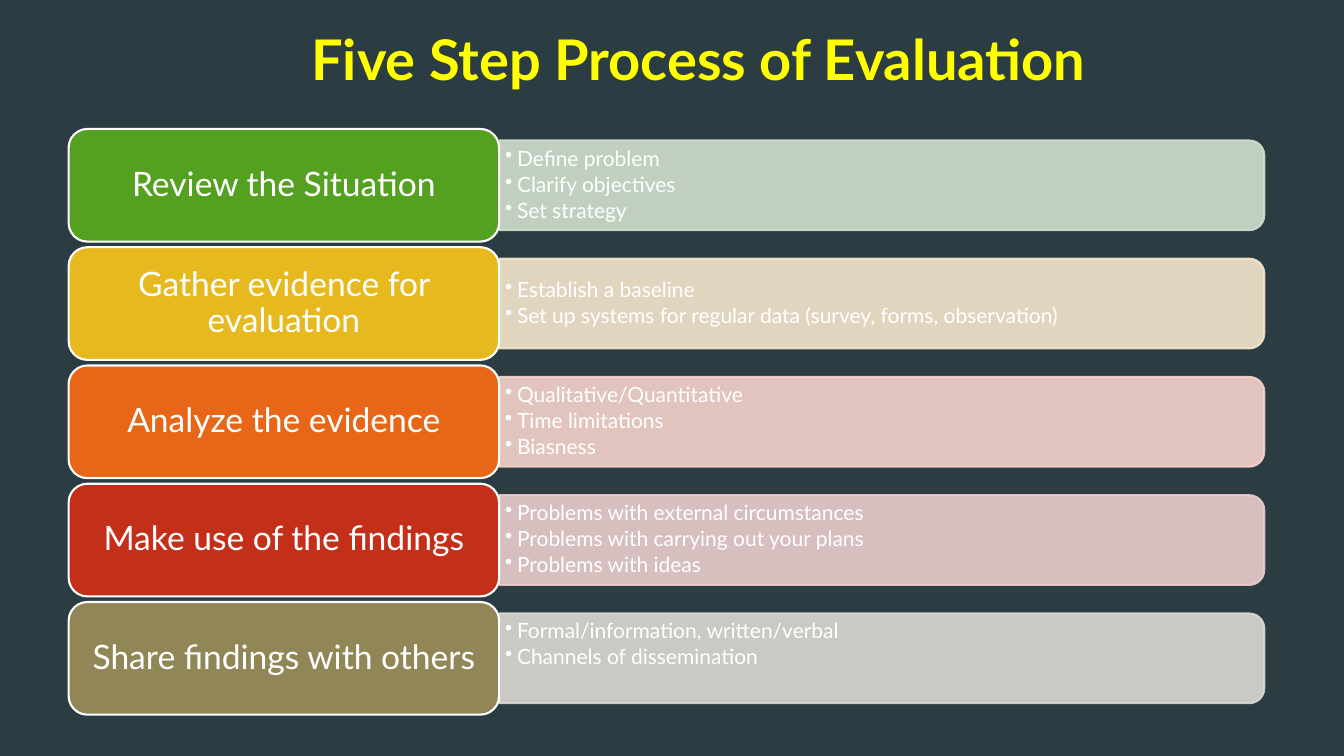
"""Builds a slide listing the five steps of an evaluation process."""
import pptx
import pptx.dml.color
import pptx.enum.shapes
import pptx.enum.text
import pptx.oxml.ns
import pptx.util
from lxml import etree

Cm = pptx.util.Cm
Pt = pptx.util.Pt
SHAPE = pptx.enum.shapes.MSO_SHAPE
ALIGN = pptx.enum.text.PP_ALIGN
ANCHOR = pptx.enum.text.MSO_ANCHOR
qn = pptx.oxml.ns.qn


def color(hex_text):
    return pptx.dml.color.RGBColor.from_string(hex_text)


class StepSlide:
    """Holds the style and the current slide, and adds each kind of element."""
    font = "Lato"
    white = "FFFFFF"
    border = 1.5

    def __init__(self, deck, background):
        self.page = deck.slides.add_slide(deck.slide_layouts[6])
        self.page.background.fill.solid()
        self.page.background.fill.fore_color.rgb = color(background)

    def set_text(self, frame, lines, size, ink, anchor, align, spacing=1.0, bold=False):
        frame.word_wrap = True
        frame.vertical_anchor = anchor
        frame.text = "\n".join(lines)
        for para in frame.paragraphs:
            para.alignment = align
            para.line_spacing = spacing
            for span in para.runs:
                span.font.name = self.font
                span.font.size = Pt(size)
                span.font.bold = bold
                span.font.color.rgb = color(ink)

    def text_box(self, left, top, width, height):
        box = self.page.shapes.add_textbox(Cm(left), Cm(top), Cm(width), Cm(height))
        return box.text_frame

    def panel(self, kind, left, top, width, height, fill, line):
        box = self.page.shapes.add_shape(kind, Cm(left), Cm(top), Cm(width), Cm(height))
        box.shadow.inherit = False
        box.fill.solid()
        box.fill.fore_color.rgb = color(fill)
        box.line.color.rgb = color(line)
        box.line.width = Pt(self.border)
        return box

    def title(self, text):
        frame = self.text_box(6.17, 0, 22.86, 2.44)
        self.set_text(frame, [text], 40, "FFFF00", ANCHOR.BOTTOM, ALIGN.CENTER, bold=True)

    def bar(self, left, top, width, height, tint):
        shift = (width - height) / 2
        box = self.panel(SHAPE.ROUND_2_SAME_RECTANGLE, left + shift, top - shift,
                         height, width, tint, tint)
        box.rotation = 90
        for paint in box._element.spPr.iter(qn("a:srgbClr")):
            etree.SubElement(paint, qn("a:alpha"), val="90000")

    def bullets(self, left, top, width, height, lines, anchor):
        frame = self.text_box(left, top, width, height)
        frame.margin_left = frame.margin_right = Cm(0.15)
        frame.margin_top = frame.margin_bottom = Cm(0.08)
        self.set_text(frame, lines, 15, self.white, anchor, ALIGN.LEFT, 0.9)
        for para in frame.paragraphs:
            para.level = 1
            para.space_after = Pt(2.4)
            properties = para._p.get_or_add_pPr()
            properties.set("marL", str(Cm(0.3)))
            properties.set("indent", str(-Cm(0.3)))
            etree.SubElement(properties, qn("a:buChar"), char="•")

    def label(self, left, top, width, height, text, fill):
        box = self.panel(SHAPE.ROUNDED_RECTANGLE, left, top, width, height, fill, self.white)
        self.set_text(box.text_frame, [text], 24, self.white, ANCHOR.MIDDLE, ALIGN.CENTER, 0.9)


STEPS = [
    ("Review the Situation", "54A021", "D1DFCD", ANCHOR.MIDDLE,
     ["Define problem", "Clarify objectives", "Set strategy"]),
    ("Gather evidence for evaluation", "E6B91E", "F5E6CD", ANCHOR.MIDDLE,
     ["Establish a baseline",
      "Set up systems for regular data (survey, forms, observation)"]),
    ("Analyze the evidence", "E76618", "F6D3CC", ANCHOR.MIDDLE,
     ["Qualitative/Quantitative", "Time limitations", "Biasness"]),
    ("Make use of the findings", "C42F1A", "EACDCD", ANCHOR.MIDDLE,
     ["Problems with external circumstances",
      "Problems with carrying out your plans", "Problems with ideas"]),
    ("Share findings with others", "918655", "DCD9D1", ANCHOR.TOP,
     ["Formal/information, written/verbal", "Channels of dissemination"]),
]
LABEL_LEFT, LABEL_WIDTH, LABEL_HEIGHT = 1.73, 10.85, 2.84
BAR_WIDTH, BAR_HEIGHT, TEXT_WIDTH, TEXT_HEIGHT = 19.28, 2.26, 19.18, 2.06
FIRST_TOP, PITCH = 3.25, 2.98

deck = pptx.Presentation()
deck.slide_width, deck.slide_height = Cm(33.87), Cm(19.05)
slide = StepSlide(deck, "2C3C43")
slide.title("Five Step Process of Evaluation")
bar_left = LABEL_LEFT + LABEL_WIDTH
for row, (name, fill, tint, anchor, lines) in enumerate(STEPS):
    top = FIRST_TOP + row * PITCH
    middle = top + LABEL_HEIGHT / 2
    slide.bar(bar_left, middle - BAR_HEIGHT / 2, BAR_WIDTH, BAR_HEIGHT, tint)
    slide.bullets(bar_left, middle - TEXT_HEIGHT / 2, TEXT_WIDTH, TEXT_HEIGHT, lines, anchor)
    slide.label(LABEL_LEFT, top, LABEL_WIDTH, LABEL_HEIGHT, name, fill)
deck.save("out.pptx")
